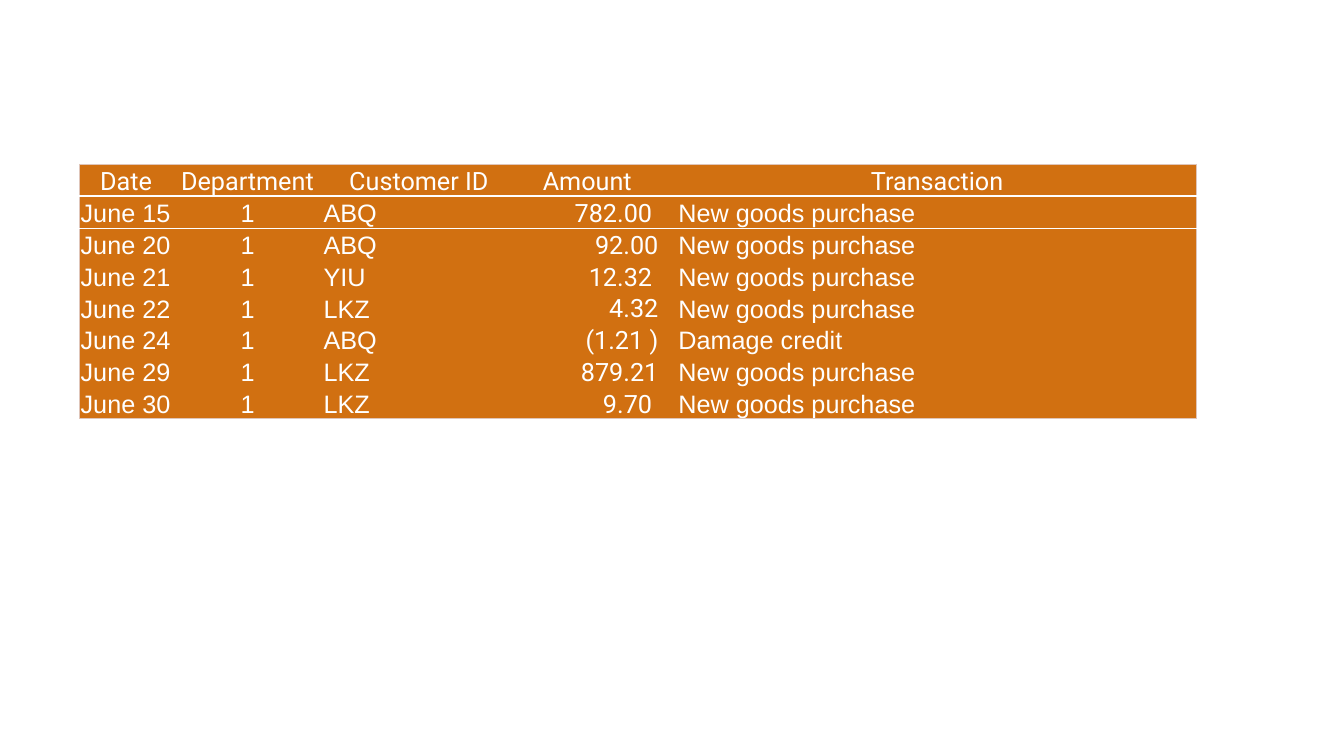
import pptx
import pptx.util
import pptx.dml.color
import pptx.enum.text
from lxml import etree
from pptx.oxml.ns import qn

Inches = pptx.util.Inches
Pt = pptx.util.Pt
RGBColor = pptx.dml.color.RGBColor
ALIGN = pptx.enum.text.PP_ALIGN

ORANGE = RGBColor(0xD1, 0x70, 0x11)
WHITE = RGBColor(0xFF, 0xFF, 0xFF)
BEIGE = RGBColor(0xDF, 0xC5, 0xB9)

HEADER = ("Date", "Department", "Customer ID", "Amount", "", "Transaction")
ROWS = [
    ("June 15", "1", "ABQ", "782.00 ", "", "New goods purchase"),
    ("June 20", "1", "ABQ", "92.00", "", "New goods purchase"),
    ("June 21", "1", "YIU", "12.32 ", "", "New goods purchase"),
    ("June 22", "1", "LKZ", "4.32", "", "New goods purchase"),
    ("June 24", "1", "ABQ", "(1.21 )", "", "Damage credit"),
    ("June 29", "1", "LKZ", "879.21", "", "New goods purchase"),
    ("June 30", "1", "LKZ", "9.70 ", "", "New goods purchase"),
]
# Width in inches, alignment and font of each column's body cells
COLUMNS = [
    (0.92, ALIGN.LEFT, "Arial"),
    (1.49, ALIGN.CENTER, "Arial"),
    (1.91, ALIGN.LEFT, "Arial"),
    (1.43, ALIGN.RIGHT, "Roboto"),
    (0.18, ALIGN.LEFT, "Arial"),
    (5.15, ALIGN.LEFT, "Arial"),
]
LEFT, TOP, HEIGHT = 0.79, 1.63, 2.45

GRID = [HEADER] + ROWS
OUTER_RULE = (BEIGE, 0.75)
# Rules keyed by the number of rows or columns before them
ROW_RULES = {0: OUTER_RULE, 1: (WHITE, 1), 2: (WHITE, 0.5), len(GRID): OUTER_RULE}
COLUMN_RULES = {0: OUTER_RULE, len(COLUMNS): OUTER_RULE}


def write(cell, text, *, font, align, size=18, color=WHITE):
    paragraph = cell.text_frame.paragraphs[0]
    paragraph.alignment = align
    paragraph.line_spacing = 0.9
    run = paragraph.add_run()
    run.text = text
    run.font.name = font
    run.font.size = Pt(size)
    run.font.color.rgb = color


def set_borders(cell, rules):
    """Set the left, right, top and bottom borders; None hides a border."""
    properties = cell._tc.get_or_add_tcPr()
    for index, (side, rule) in enumerate(zip("LRTB", rules)):
        line = etree.Element(qn(f"a:ln{side}"))
        if rule:
            color, width = rule
            line.set("w", str(Pt(width)))
            fill = etree.SubElement(line, qn("a:solidFill"))
            etree.SubElement(fill, qn("a:srgbClr")).set("val", str(color))
        else:
            etree.SubElement(line, qn("a:noFill"))
        properties.insert(index, line)


def add_transactions(slide):
    width = sum(column[0] for column in COLUMNS)
    table = slide.shapes.add_table(
        len(GRID), len(COLUMNS),
        Inches(LEFT), Inches(TOP), Inches(width), Inches(HEIGHT)).table
    table.horz_banding = False
    table.first_row = False
    for column, (column_width, _, _) in zip(table.columns, COLUMNS):
        column.width = Inches(column_width)
    for r, values in enumerate(GRID):
        table.rows[r].height = Inches(HEIGHT / len(GRID))
        for c, text in enumerate(values):
            cell = table.cell(r, c)
            cell.margin_left = cell.margin_right = cell.margin_top = Inches(0.01)
            cell.margin_bottom = 0
            cell.vertical_anchor = pptx.enum.text.MSO_ANCHOR.BOTTOM
            cell.fill.solid()
            cell.fill.fore_color.rgb = ORANGE
            set_borders(cell, (COLUMN_RULES.get(c), COLUMN_RULES.get(c + 1),
                               ROW_RULES.get(r), ROW_RULES.get(r + 1)))
            if text:
                _, align, font = COLUMNS[c]
                if r == 0:
                    align, font = ALIGN.CENTER, "Roboto"
                write(cell, text, font=font, align=align)


def main():
    presentation = pptx.Presentation()
    presentation.slide_width = Inches(13.33)
    presentation.slide_height = Inches(7.5)
    slide = presentation.slides.add_slide(presentation.slide_layouts[6])
    add_transactions(slide)
    presentation.save("out.pptx")


if __name__ == "__main__":
    main()
